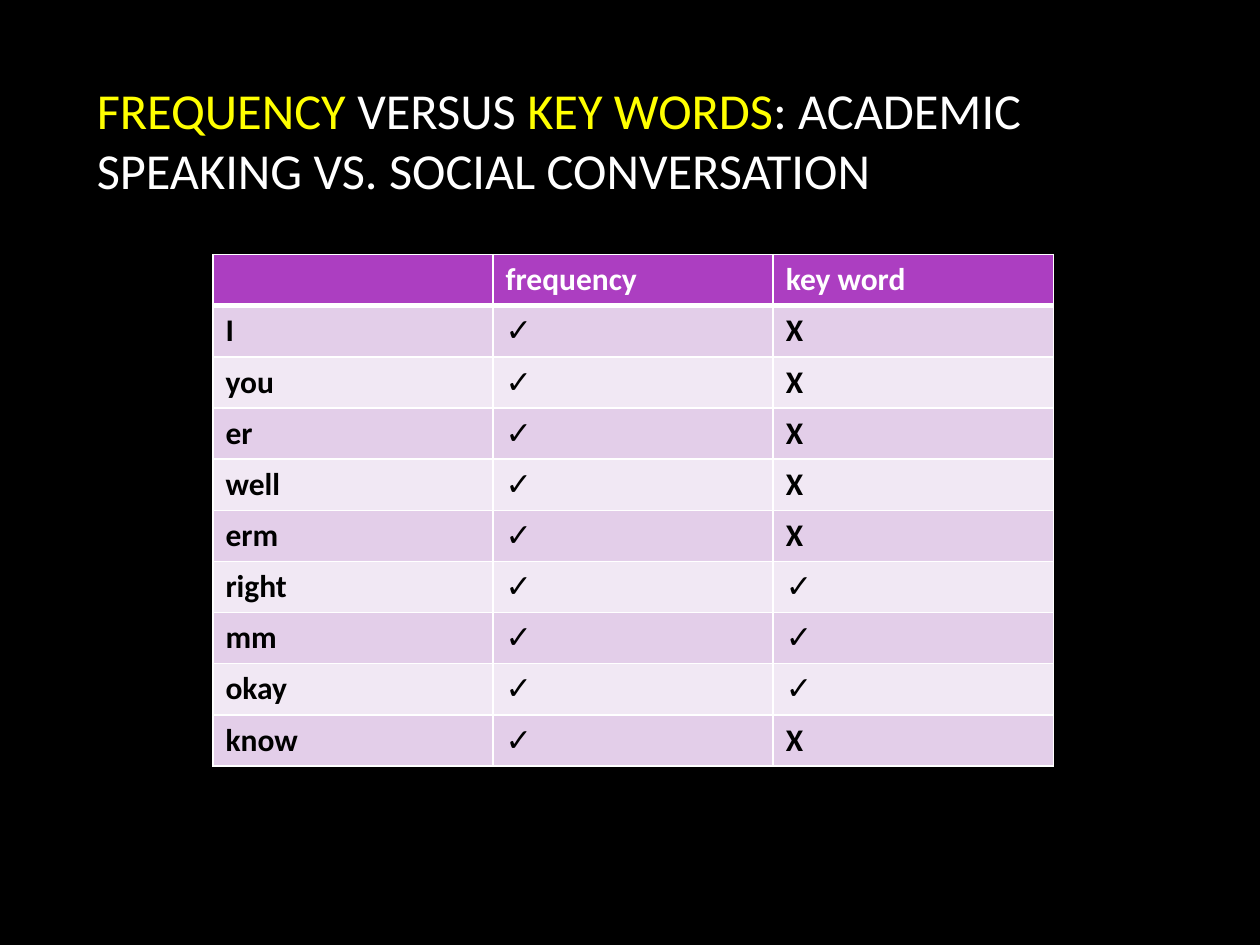
from lxml import etree
from pptx import Presentation
from pptx import util as u
from pptx.dml.color import RGBColor
from pptx.enum import text
from pptx.oxml import ns

COLORS = {
    "background": "000000",
    "highlight": "FFFF00",
    "light": "FFFFFF",
    "dark": "000000",
    "header": "AC3EC1",
    "odd_row": "E3CEE9",
    "even_row": "F1E8F4",
}
FONT = "Calibri"
TITLE = [
    ("FREQUENCY", "highlight"),
    (" VERSUS ", "light"),
    ("KEY WORDS", "highlight"),
    (": ACADEMIC SPEAKING VS. SOCIAL CONVERSATION", "light"),
]
HEADINGS = ["", "frequency", "key word"]
WORDS = ["I", "you", "er", "well", "erm", "right", "mm", "okay", "know"]
KEY_WORDS = {"right", "mm", "okay"}


def rgb(name):
    return RGBColor.from_string(COLORS[name])


def add_title(slide, left, top, width, height):
    title = slide.shapes.add_textbox(left, top, width, height)
    frame = title.text_frame
    frame.word_wrap = True
    frame.vertical_anchor = text.MSO_ANCHOR.MIDDLE
    heading = frame.paragraphs[0]
    heading.font.size = u.Pt(28.8)
    heading.font.name = FONT
    for words, color in TITLE:
        phrase = heading.add_run()
        phrase.text = words
        phrase.font.color.rgb = rgb(color)


def set_borders(cell, widths):
    properties = cell._tc.get_or_add_tcPr()
    for side, points in widths.items():
        line = etree.SubElement(properties, ns.qn(f"a:ln{side}"), w=str(u.Pt(points)))
        fill = etree.SubElement(line, ns.qn("a:solidFill"))
        etree.SubElement(fill, ns.qn("a:srgbClr"), val=COLORS["light"])


def add_word_table(slide, left, top, width, height):
    marks = [[word, "✓", "✓" if word in KEY_WORDS else "X"] for word in WORDS]
    rows = [HEADINGS] + marks
    table = slide.shapes.add_table(len(rows), len(HEADINGS), left, top, width, height).table
    for r, row in enumerate(rows):
        band = "header" if r == 0 else "odd_row" if r % 2 else "even_row"
        for c, entry in enumerate(row):
            cell = table.cell(r, c)
            set_borders(cell, {"L": 1, "R": 1, "T": 3 if r == 1 else 1, "B": 3 if r == 0 else 1})
            cell.fill.solid()
            cell.fill.fore_color.rgb = rgb(band)
            cell.text = entry
            font = cell.text_frame.paragraphs[0].font
            font.name = FONT
            font.size = u.Pt(18)
            font.bold = True
            font.color.rgb = rgb("dark" if r else "light")


def main():
    deck = Presentation()
    deck.slide_width, deck.slide_height = u.Inches(10), u.Inches(7.5)
    slide = deck.slides.add_slide(deck.slide_layouts[6])
    slide.background.fill.solid()
    slide.background.fill.fore_color.rgb = rgb("background")
    add_title(slide, u.Inches(0.67), u.Inches(0.52), u.Inches(8.67), u.Inches(1.17))
    add_word_table(slide, u.Inches(1.69), u.Inches(2.02), u.Inches(6.67), u.Inches(4.06))
    deck.save("out.pptx")


if __name__ == "__main__":
    main()
